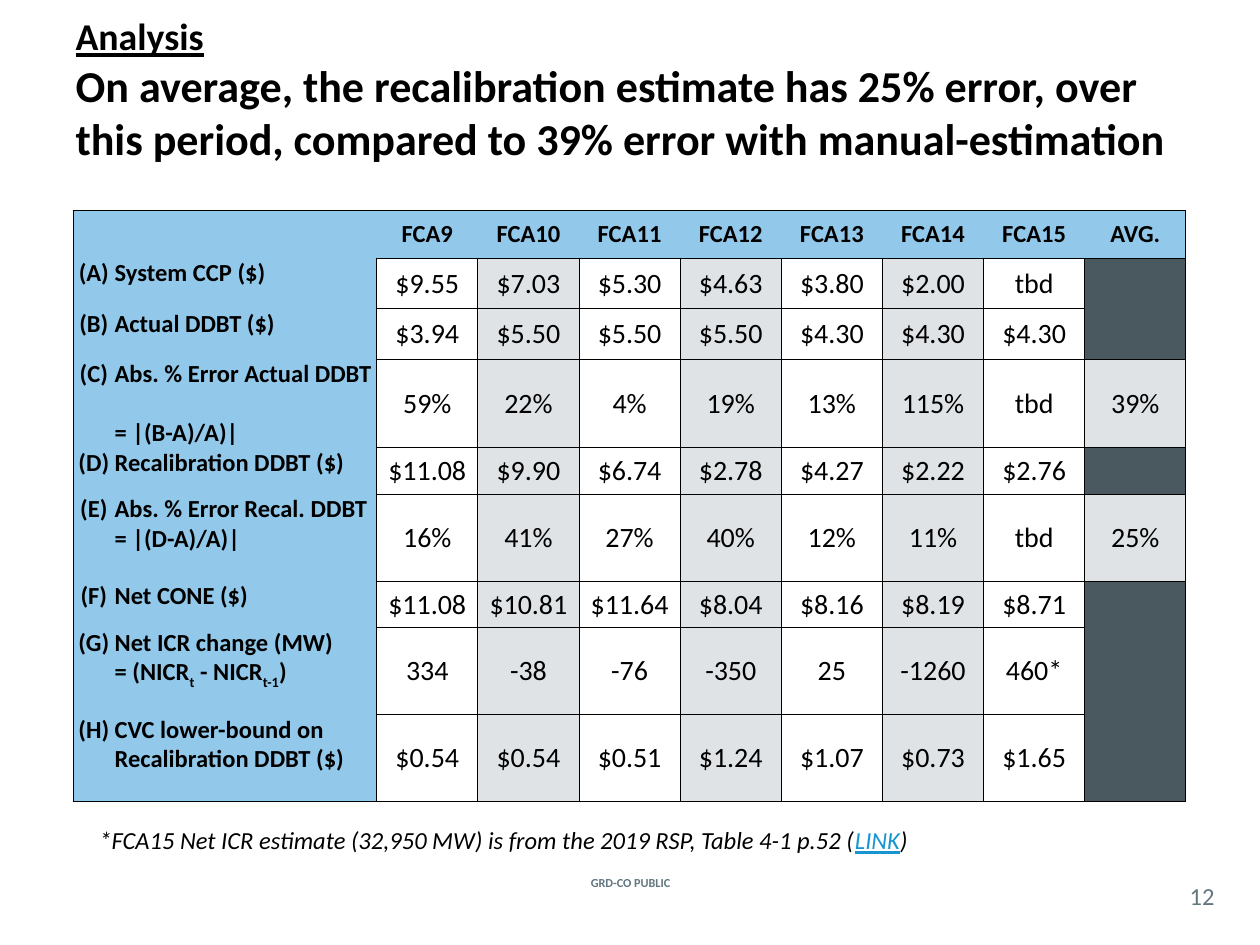
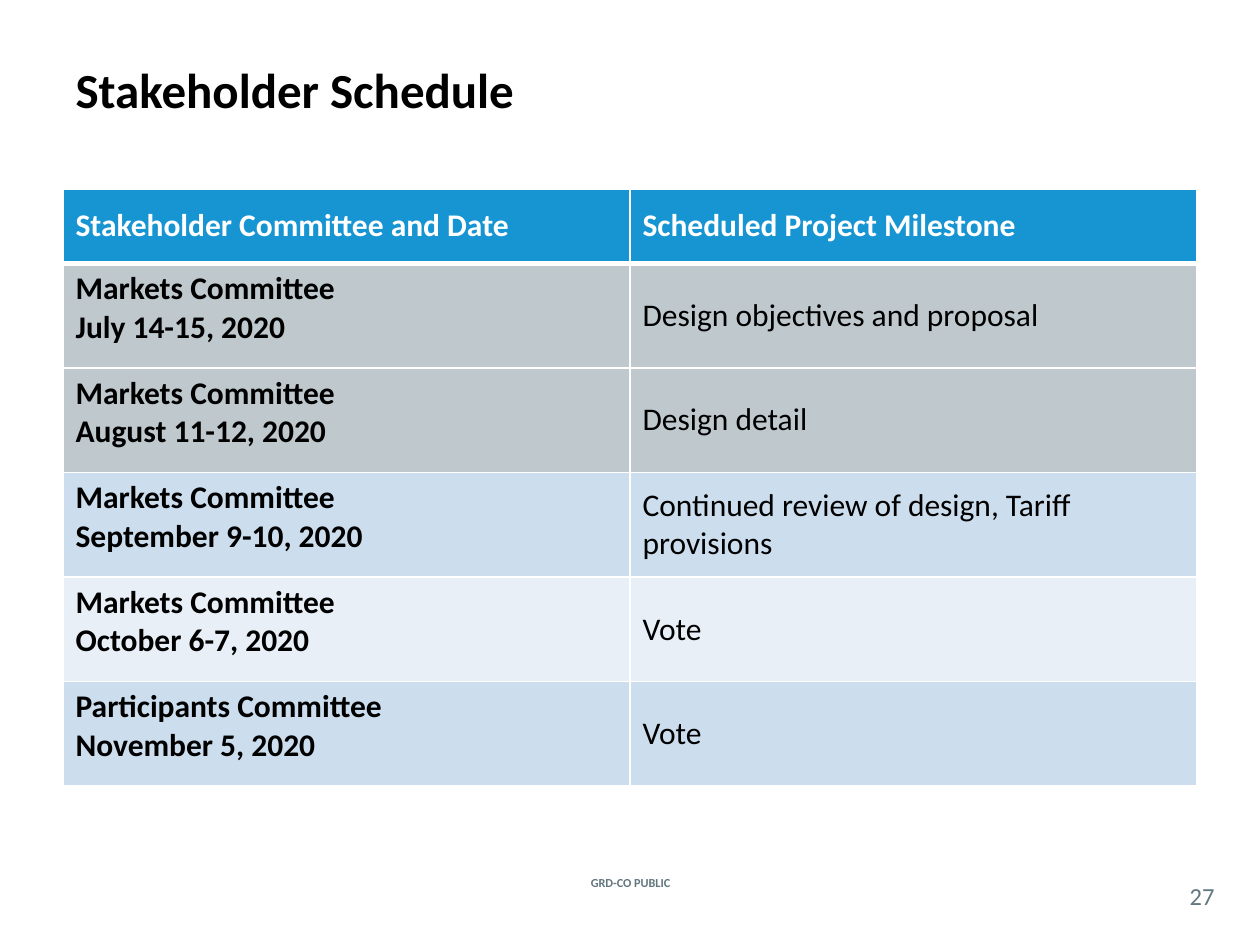
from dataclasses import dataclass

from lxml import etree
from pptx import Presentation
from pptx import util as u
from pptx.dml.color import RGBColor
from pptx.enum import text as t
from pptx.oxml import ns


@dataclass(frozen=True)
class Theme:
    font: str = "Calibri"
    ink: str = "000000"
    paper: str = "FFFFFF"
    muted: str = "62777F"
    accent: str = "1795D2"
    label: str = "92C8EA"
    stripe: str = "DFE3E6"
    blocked: str = "49595F"
    past: str = "BFC9CD"
    band_dark: str = "CCDDEE"
    band_light: str = "E8EFF7"
    title: float = 28
    title_long: float = 25.2
    kicker: float = 21.6
    schedule: float = 18
    value: float = 16
    small: float = 14
    footer: float = 7


THEME = Theme()
TITLE_ONLY = 5
CENTER = t.PP_ALIGN.CENTER
MIDDLE = t.MSO_ANCHOR.MIDDLE
SUBSCRIPT = {"baseline": -25000}

FCA_COLUMNS = ["FCA9", "FCA10", "FCA11", "FCA12", "FCA13", "FCA14", "FCA15", "AVG."]
# Row height, letter, label paragraphs, values, and the average if there is one
ERROR_ROWS = [
    (0.4, "(A)", ["System CCP ($)"],
     "$9.55 $7.03 $5.30 $4.63 $3.80 $2.00 tbd", None),
    (0.4, "(B)", ["Actual DDBT ($)"],
     "$3.94 $5.50 $5.50 $5.50 $4.30 $4.30 $4.30", None),
    (0.69, "(C)", ["Abs. % Error Actual DDBT", "= |(B-A)/A)|"],
     "59% 22% 4% 19% 13% 115% tbd", "39%"),
    (0.37, "(D)", ["Recalibration DDBT ($)"],
     "$11.08 $9.90 $6.74 $2.78 $4.27 $2.22 $2.76", None),
    (0.69, "(E)", ["Abs. % Error Recal. DDBT", "= |(D-A)/A)|"],
     "16% 41% 27% 40% 12% 11% tbd", "25%"),
    (0.37, "(F)", ["Net CONE ($)"],
     "$11.08 $10.81 $11.64 $8.04 $8.16 $8.19 $8.71", None),
    (0.69, "(G)", ["Net ICR change (MW)",
                   [("= (NICR", {}), ("t", SUBSCRIPT), (" - NICR", {}),
                    ("t-1", SUBSCRIPT), (")", {})]],
     "334 -38 -76 -350 25 -1260 460*", None),
    (0.69, "(H)", ["CVC lower-bound on Recalibration DDBT ($)"],
     "$0.54 $0.54 $0.51 $1.24 $1.07 $0.73 $1.65", None),
]
MILESTONES = [
    ("Markets Committee", "July 14-15, 2020", "Design objectives and proposal", THEME.past),
    ("Markets Committee", "August 11-12, 2020", "Design detail", THEME.past),
    ("Markets Committee", "September 9-10, 2020",
     "Continued review of design, Tariff provisions", THEME.band_dark),
    ("Markets Committee", "October 6-7, 2020", "Vote", THEME.band_light),
    ("Participants Committee", "November 5, 2020", "Vote", THEME.band_dark),
]


def write_run(paragraph, words, size, color=THEME.ink, bold=False, italic=False,
              underline=False, baseline=None):
    run = paragraph.add_run()
    run.text = words
    font = run.font
    font.name, font.size = THEME.font, u.Pt(size)
    font.bold, font.italic, font.underline = bold, italic, underline
    font.color.rgb = RGBColor.from_string(color)
    if baseline is not None:
        run._r.get_or_add_rPr().set("baseline", str(baseline))


def write(frame, paragraphs, align=t.PP_ALIGN.LEFT, gap=0, **style):
    """Fill a frame; a paragraph is a string or a list of (words, style) runs."""
    for i, content in enumerate(paragraphs):
        paragraph = frame.paragraphs[0] if i == 0 else frame.add_paragraph()
        paragraph.alignment = align
        if i and gap:
            paragraph.space_before = u.Pt(gap)
        runs = [(content, {})] if isinstance(content, str) else content
        for words, changes in runs:
            write_run(paragraph, words, **{**style, **changes})


def add_text(slide, box, paragraphs, inset=None, anchor=t.MSO_ANCHOR.TOP, **style):
    frame = slide.shapes.add_textbox(*map(u.Inches, box)).text_frame
    frame.word_wrap = True
    frame.vertical_anchor = anchor
    if inset is not None:
        frame.margin_left = frame.margin_right = u.Inches(inset)
        frame.margin_top = frame.margin_bottom = u.Inches(inset)
    write(frame, paragraphs, **style)


def add_slide(deck, title, page):
    """Add a slide with its title, footer and page number."""
    slide = deck.slides.add_slide(deck.slide_layouts[TITLE_ONLY])
    heading = slide.shapes.title
    heading.left, heading.top, heading.width, heading.height = map(
        u.Inches, (0.5, 0.08, 9, 1.25))
    frame = heading.text_frame
    frame.auto_size = t.MSO_AUTO_SIZE.NONE
    frame.vertical_anchor = MIDDLE
    write(frame, title, size=THEME.title, bold=True)
    add_text(slide, (4.27, 6.92, 1.47, 0.17), ["GRD-CO PUBLIC"], anchor=MIDDLE,
             align=CENTER, size=THEME.footer, color=THEME.muted, bold=True)
    add_text(slide, (9.33, 6.96, 0.42, 0.29), [page], inset=0, anchor=MIDDLE,
             align=CENTER, size=THEME.small, color=THEME.muted)
    return slide


def add_grid(slide, left, top, widths, heights):
    table = slide.shapes.add_table(
        len(heights), len(widths),
        *map(u.Inches, (left, top, sum(widths), sum(heights)))).table
    table.first_row = table.horz_banding = False
    for column, width in zip(table.columns, widths):
        column.width = u.Inches(width)
    for row, height in zip(table.rows, heights):
        row.height = u.Inches(height)
    return table


def style_cell(cell, fill, edges, color, margins=None):
    """Set borders and fill; edges gives points for L, R, T and B, 0 for no line."""
    properties = cell._tc.get_or_add_tcPr()
    for side in "LRTB":
        line = etree.SubElement(properties, ns.qn(f"a:ln{side}"),
                                w=str(u.Pt(edges[side])))
        if edges[side]:
            solid = etree.SubElement(line, ns.qn("a:solidFill"))
            etree.SubElement(solid, ns.qn("a:srgbClr"), val=color)
        else:
            etree.SubElement(line, ns.qn("a:noFill"))
    cell.fill.solid()
    cell.fill.fore_color.rgb = RGBColor.from_string(fill)
    if margins is not None:
        cell.margin_left = cell.margin_right = u.Inches(margins)
        cell.margin_top = cell.margin_bottom = u.Inches(margins)


def error_fill(row, column, average):
    if row == 0 or column < 2:
        return THEME.label
    if column == 9:
        return THEME.stripe if average else THEME.blocked
    return THEME.stripe if column % 2 else THEME.paper


def rule_error_table(table, fills):
    """Draw lines everywhere except inside the label and blocked areas."""
    def weight(fill, row, column):
        inside = 0 <= row < len(fills) and 0 <= column < len(fills[0])
        joined = (inside and fills[row][column] == fill
                  and fill in (THEME.label, THEME.blocked))
        return 0 if joined else 0.5

    for r, row in enumerate(fills):
        for c, fill in enumerate(row):
            edges = {"L": weight(fill, r, c - 1), "R": weight(fill, r, c + 1),
                     "T": weight(fill, r - 1, c), "B": weight(fill, r + 1, c)}
            style_cell(table.cell(r, c), fill, edges, THEME.ink, margins=0)


def add_error_table(slide):
    heights = [0.38] + [row[0] for row in ERROR_ROWS]
    table = add_grid(slide, 0.58, 1.67, [0.33, 2.08] + [0.803] * 8, heights)
    averages = [None] + [row[-1] for row in ERROR_ROWS]
    rule_error_table(table, [[error_fill(r, c, average) for c in range(10)]
                             for r, average in enumerate(averages)])

    def put(row, column, words, **style):
        cell = table.cell(row, column)
        cell.vertical_anchor = MIDDLE
        write(cell.text_frame, [words], align=CENTER, **style)

    for c, auction in enumerate(FCA_COLUMNS, 2):
        put(0, c, auction, size=THEME.small, bold=True)
    for r, (_, letter, label, values, average) in enumerate(ERROR_ROWS, 1):
        write(table.cell(r, 0).text_frame, [letter], align=CENTER,
              size=THEME.small, bold=True)
        write(table.cell(r, 1).text_frame, label, gap=17 if letter == "(C)" else 0,
              size=THEME.small, bold=True)
        for c, value in enumerate(values.split() + ([average] if average else []), 2):
            put(r, c, value, size=THEME.value)


def add_schedule_table(slide):
    table = add_grid(slide, 0.5, 1.5, [4.5, 4.5], [0.59] + [0.83] * len(MILESTONES))

    def put(row, column, paragraphs, fill, anchor=MIDDLE, **style):
        cell = table.cell(row, column)
        edges = {"L": 1, "R": 1, "T": 3 if row == 1 else 1, "B": 1 if row else 3}
        style_cell(cell, fill, edges, THEME.paper)
        cell.vertical_anchor = anchor
        write(cell.text_frame, paragraphs, size=THEME.schedule, **style)

    for c, heading in enumerate(["Stakeholder Committee and Date",
                                 "Scheduled Project Milestone"]):
        put(0, c, [heading], THEME.accent, color=THEME.paper, bold=True)
    for r, (committee, date, milestone, fill) in enumerate(MILESTONES, 1):
        put(r, 0, [committee, date], fill, anchor=t.MSO_ANCHOR.TOP, bold=True)
        put(r, 1, [milestone], fill)


def main():
    deck = Presentation()
    deck.slide_width, deck.slide_height = u.Inches(10), u.Inches(7.5)

    analysis = add_slide(deck, [
        [("Analysis", {"size": THEME.kicker, "underline": True})],
        [("On average, the recalibration estimate has 25% error, over this period, "
          "compared to 39% error with manual-estimation", {"size": THEME.title_long})],
    ], "12")
    add_error_table(analysis)
    add_text(analysis, (0.69, 6.5, 8.65, 0.34), [[
        ("*FCA15 Net ICR estimate (32,950 MW) is from the 2019 RSP, Table 4-1 p.52 (", {}),
        ("LINK", {"color": THEME.accent, "underline": True}),
        (")", {}),
    ]], size=THEME.small, italic=True)

    schedule = add_slide(deck, ["Stakeholder Schedule"], "27")
    add_schedule_table(schedule)

    deck.save("out.pptx")


if __name__ == "__main__":
    main()
